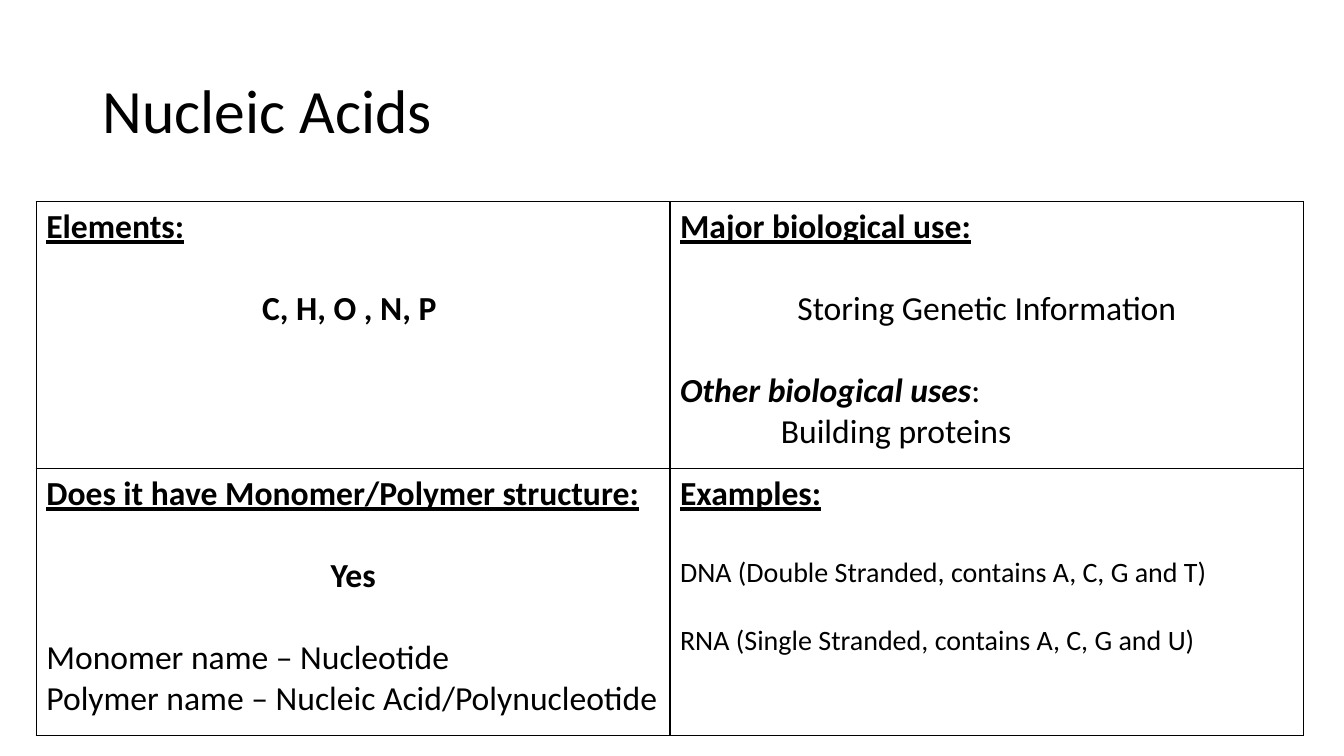
from lxml.etree import SubElement
from pptx import Presentation
from pptx.dml.color import RGBColor
from pptx.enum.text import MSO_ANCHOR, MSO_AUTO_SIZE, PP_ALIGN
from pptx.oxml.ns import qn
from pptx.util import Inches, Pt

COLUMNS, ROWS = 100, 75
LINE = 1.22
TITLE = "Nucleic Acids"


def color(value):
    return RGBColor.from_string(value)


def entry(*spans, size=24, gap=0, align=PP_ALIGN.LEFT, indent=0):
    return {"spans": spans, "size": size, "gap": gap, "align": align, "indent": indent}


def heading(text):
    return entry((text, "bu"), (" ", ""))


def answer(text, marks=""):
    return entry((text, marks), gap=24, align=PP_ALIGN.CENTER)


QUADRANTS = [
    [
        [heading("Elements:"), answer("C, H, O , N, P ", "b")],
        [
            heading("Major biological use:"),
            answer("Storing Genetic Information"),
            entry(("Other biological uses", "bi"), (":", ""), gap=24),
            entry(("Building proteins", ""), indent=1),
        ],
    ],
    [
        [
            heading("Does it have Monomer/Polymer structure:"),
            answer("Yes", "b"),
            entry(("Monomer name – Nucleotide", ""), gap=24),
            entry(("Polymer name – Nucleic Acid/Polynucleotide", "")),
        ],
        [
            entry(("Examples:", "bu")),
            entry(("DNA (Double Stranded, contains A, C, G and T)", ""), size=20, gap=24),
            entry(("RNA (Single Stranded, contains A, C, G and U)", ""), size=20, gap=20),
        ],
    ],
]


class SlideBuilder:
    font = "Calibri"
    ink = "000000"
    paper = "FFFFFF"

    def __init__(self, deck):
        self.column = deck.slide_width / COLUMNS
        self.row = deck.slide_height / ROWS
        self.slide = deck.slides.add_slide(deck.slide_layouts[5])

    def area(self, left, top, width, height):
        return (round(left * self.column), round(top * self.row),
                round(width * self.column), round(height * self.row))

    def style(self, span, size, marks=""):
        font = span.font
        font.name, font.size = self.font, Pt(size)
        font.color.rgb = color(self.ink)
        font.bold, font.italic, font.underline = (mark in marks for mark in "biu")

    def title(self, text, area):
        box = self.slide.shapes.title
        box.left, box.top, box.width, box.height = self.area(*area)
        frame = box.text_frame
        frame.text = text
        frame.auto_size = MSO_AUTO_SIZE.NONE
        frame.vertical_anchor = MSO_ANCHOR.MIDDLE
        para = frame.paragraphs[0]
        para.alignment, para.line_spacing = PP_ALIGN.LEFT, 0.9
        self.style(para.runs[0], 44)

    def paragraph(self, para, item):
        para.alignment = item["align"]
        para.space_before = Pt(round(item["gap"] * LINE, 1))
        if item["indent"]:
            para._p.get_or_add_pPr().set("marL", str(Inches(item["indent"])))
        for text, marks in item["spans"]:
            span = para.add_run()
            span.text = text
            self.style(span, item["size"], marks)

    def borders(self, cell):
        properties = cell._tc.get_or_add_tcPr()
        for side in ("lnL", "lnR", "lnT", "lnB"):
            line = SubElement(properties, qn(f"a:{side}"), w=str(Pt(1)))
            fill = SubElement(line, qn("a:solidFill"))
            SubElement(fill, qn("a:srgbClr"), val=self.ink)

    def cell(self, cell, items):
        self.borders(cell)
        cell.fill.solid()
        cell.fill.fore_color.rgb = color(self.paper)
        frame = cell.text_frame
        for index, item in enumerate(items):
            para = frame.add_paragraph() if index else frame.paragraphs[0]
            self.paragraph(para, item)

    def table(self, content, area):
        table = self.slide.shapes.add_table(
            len(content), len(content[0]), *self.area(*area)).table
        table.first_row = table.horz_banding = False
        for row, cells in enumerate(content):
            for column, items in enumerate(cells):
                self.cell(table.cell(row, column), items)


def main():
    deck = Presentation()
    deck.slide_width, deck.slide_height = Inches(13.33), Inches(7.5)
    page = SlideBuilder(deck)
    page.title(TITLE, (6.9, 4, 86.25, 14.5))
    page.table(QUADRANTS, (2.7, 20, 94.3, 53))
    deck.save("out.pptx")


if __name__ == "__main__":
    main()
